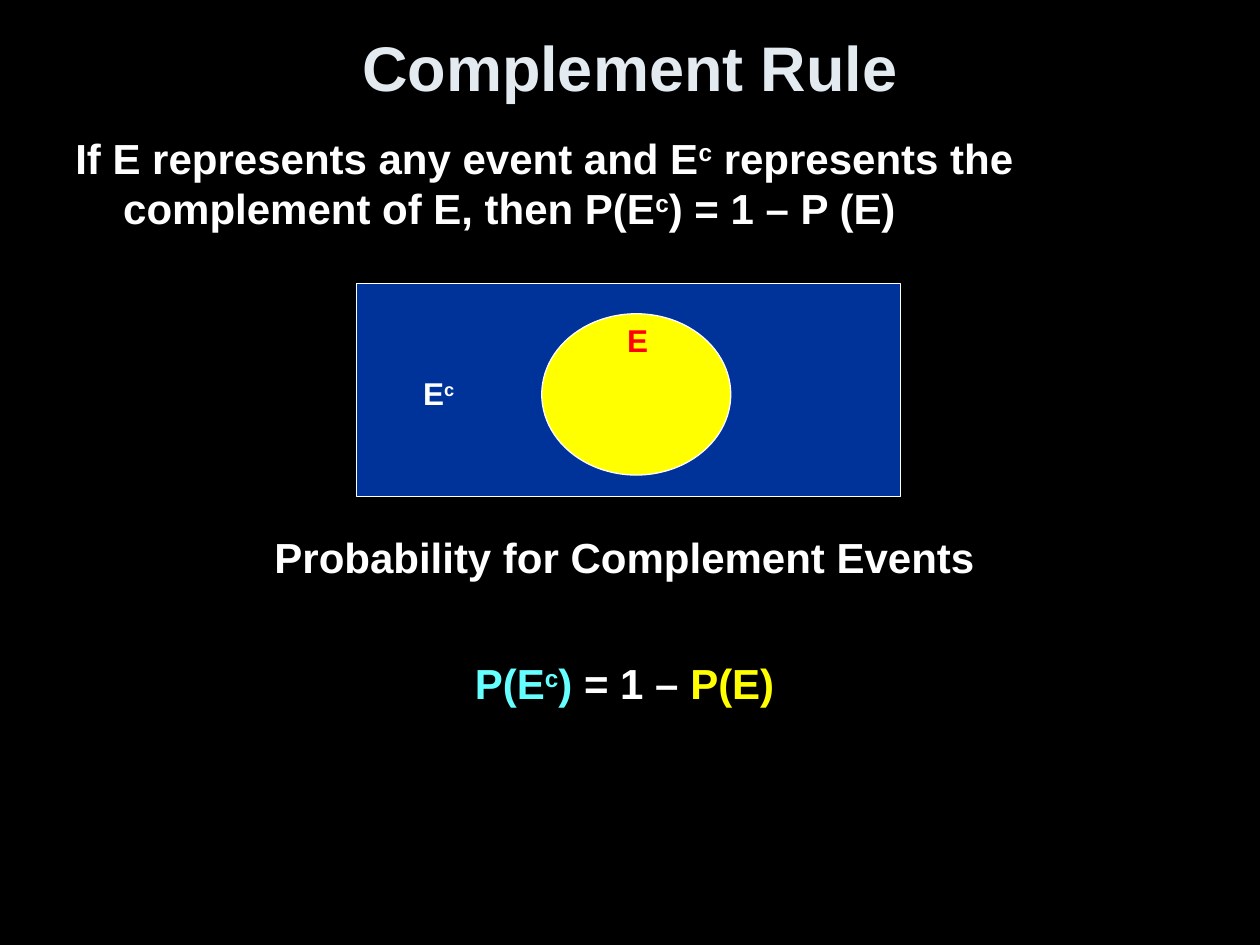
from pptx import Presentation
from pptx import util as u
from pptx.dml.color import RGBColor
from pptx.enum import shapes, text

WHITE, YELLOW, RED, CYAN = "FFFFFF", "FFFF00", "FF0000", "66FFFF"
BLACK, NAVY, PALE = "000000", "003399", "E3EBF1"
SUPERSCRIPT = "30000"  # thousandths of a percent


def paint(target, colour):
    """Give a solid fill the colour of a hex string."""
    target.solid()
    target.fore_color.rgb = RGBColor.from_string(colour)


class Board:
    """Style and current slide."""

    font = "Arial"
    line_width = u.Pt(0.75)

    def __init__(self, deck):
        self.page = deck.slides.add_slide(deck.slide_layouts[6])
        paint(self.page.background.fill, BLACK)

    def group(self):
        return self.page.shapes.add_group_shape().shapes

    def figure(self, parent, kind, place, fill):
        shape = parent.add_shape(kind, *map(u.Inches, place))
        shape.shadow.inherit = False
        paint(shape.fill, fill)
        paint(shape.line.fill, WHITE)
        shape.line.width = self.line_width

    def label(self, parent, place, spans, size, colour=WHITE, wrap=False,
              align=text.PP_ALIGN.LEFT, anchor=text.MSO_ANCHOR.TOP, hanging=0):
        """Spans are (words, colour or None); a "^" starts a raised span."""
        frame = parent.add_textbox(*map(u.Inches, place)).text_frame
        frame.word_wrap = wrap
        frame.vertical_anchor = anchor
        if not wrap:
            frame.auto_size = text.MSO_AUTO_SIZE.SHAPE_TO_FIT_TEXT
        para = frame.paragraphs[0]
        para.alignment = align
        if hanging:
            properties = para._p.get_or_add_pPr()
            properties.set("marL", str(u.Inches(hanging)))
            properties.set("indent", str(-u.Inches(hanging)))
        para.font.name = self.font
        para.font.size = u.Pt(size)
        para.font.bold = True
        paint(para.font.fill, colour)
        for words, span_colour in spans:
            span = para.add_run()
            span.text = words.lstrip("^")
            if words.startswith("^"):
                span._r.get_or_add_rPr().set("baseline", SUPERSCRIPT)
            if span_colour:
                paint(span.font.fill, span_colour)


def main():
    deck = Presentation()
    deck.slide_width, deck.slide_height = u.Inches(10), u.Inches(7.5)
    board = Board(deck)
    page_shapes = board.page.shapes

    # Title and rule
    board.label(page_shapes, (0.5, 0.11, 9, 0.83), [("Complement Rule", None)],
                36, PALE, wrap=True, align=text.PP_ALIGN.CENTER,
                anchor=text.MSO_ANCHOR.MIDDLE)
    rule = ["If E represents any event and E", "^c",
            " represents the complement of E, then P(E", "^c", ") = 1 – P (E)"]
    board.label(page_shapes, (0.5, 1, 9, 6.08), [(words, None) for words in rule],
                24, wrap=True, hanging=0.38)

    # Venn diagram
    venn = board.group()
    board.figure(venn, shapes.MSO_SHAPE.RECTANGLE, (2.83, 2.25, 4.32, 1.69), NAVY)
    board.figure(venn, shapes.MSO_SHAPE.OVAL, (4.3, 2.49, 1.5, 1.28), YELLOW)
    board.label(venn, (4.88, 2.5, 0.37, 0.4), [("E", None)], 18, RED)
    board.label(venn, (3.26, 2.92, 0.46, 0.4), [("E", None), ("^c", None)], 18)

    # Formula and its heading
    board.label(page_shapes, (3.67, 5.17, 2.62, 0.51),
                [("P(E", CYAN), ("^c", CYAN), (") ", CYAN),
                 ("= 1 – ", None), ("P(E)", YELLOW)], 24)
    board.label(page_shapes, (2.08, 4.17, 5.81, 0.51),
                [("Probability for Complement Events", None)], 24)

    deck.save("out.pptx")


if __name__ == "__main__":
    main()
